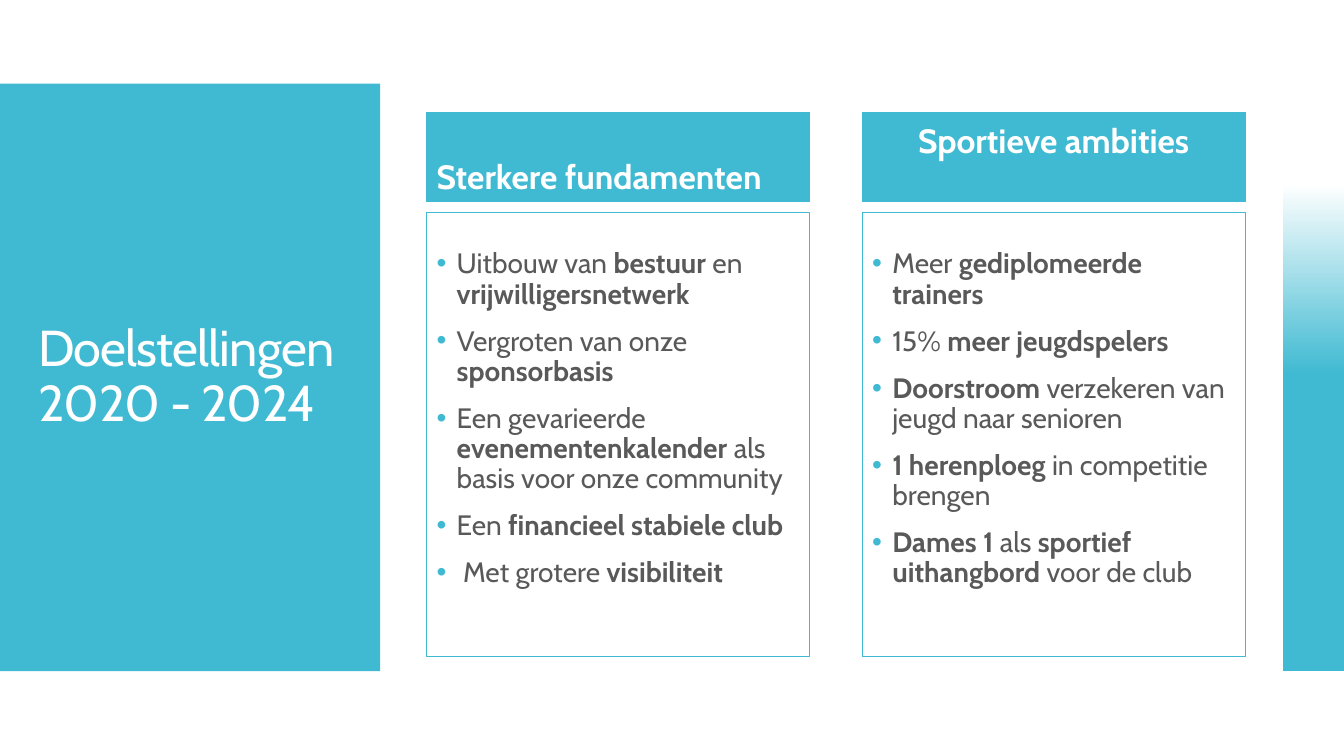
from lxml.etree import SubElement
from pptx import Presentation
from pptx.dml.color import RGBColor
from pptx.enum.shapes import MSO_SHAPE
from pptx.enum.text import MSO_ANCHOR, MSO_AUTO_SIZE, PP_ALIGN
from pptx.oxml.ns import qn
from pptx.util import Inches, Pt

TEAL = RGBColor(0x40, 0xBA, 0xD2)
WHITE = RGBColor(0xFF, 0xFF, 0xFF)
GREY = RGBColor(0x59, 0x59, 0x59)
FONT = "Cabin"

COLUMN_LEFT, COLUMN_STEP = 4.23, 4.32
COLUMN_TOP, COLUMN_WIDTH = 1.12, 3.8
HEADING_HEIGHT, LIST_OFFSET, LIST_HEIGHT = 0.88, 0.99, 4.4

# Asterisks enclose the bold words.
# Each column: heading, alignment, bottom inset of the heading, goals
COLUMNS = [
    ("Sterkere fundamenten", PP_ALIGN.LEFT, 0.05, [
        "Uitbouw van *bestuur *en *vrijwilligersnetwerk*",
        "Vergroten van onze *sponsorbasis*",
        "Een gevarieerde *evenementenkalender *als basis voor onze community",
        "Een *financieel stabiele club*",
        " Met grotere *visibiliteit*",
    ]),
    ("Sportieve ambities", PP_ALIGN.CENTER, 0.41, [
        "Meer *gediplomeerde trainers*",
        "15% *meer jeugdspelers*",
        "*Doorstroom *verzekeren van jeugd naar senioren",
        "*1 herenploeg *in competitie brengen",
        "*Dames 1 *als *sportief uithangbord *voor de club",
    ]),
]


def place(shape, left, top, width, height):
    shape.left, shape.top = Inches(left), Inches(top)
    shape.width, shape.height = Inches(width), Inches(height)


def set_frame(shape, anchor, bottom_inset=0.05):
    frame = shape.text_frame
    frame.word_wrap = True
    frame.auto_size = MSO_AUTO_SIZE.NONE
    frame.vertical_anchor = anchor
    frame.margin_left = frame.margin_right = Inches(0.1)
    frame.margin_top = Inches(0.05)
    frame.margin_bottom = Inches(bottom_inset)
    return frame


def format_font(font, size, color, bold=False):
    font.name = FONT
    font.size = Pt(size)
    font.bold = bold
    font.color.rgb = color


def outline(shape):
    shape.line.color.rgb = TEAL
    shape.line.width = Pt(0.75)


def add_panel(slide, left, top, width, height):
    panel = slide.shapes.add_shape(
        MSO_SHAPE.RECTANGLE, Inches(left), Inches(top), Inches(width), Inches(height))
    panel.shadow.inherit = False
    panel.line.fill.background()
    return panel


def add_fading_strip(slide, left, top, width, height):
    strip = add_panel(slide, left, top, width, height)
    strip.fill.gradient()
    strip.fill.gradient_angle = 270
    stops = zip(strip.fill.gradient_stops, (0.18, 0.5), (WHITE, TEAL))
    for stop, position, color in stops:
        stop.position = position
        stop.color.rgb = color


def fill_title(title, left, top, width, height):
    place(title, left, top, width, height)
    frame = set_frame(title, MSO_ANCHOR.MIDDLE)
    frame.text = "Doelstellingen\v2020 - 2024"
    paragraph = frame.paragraphs[0]
    paragraph.alignment = PP_ALIGN.LEFT
    paragraph.line_spacing = 0.9
    for run in paragraph.runs:
        format_font(run.font, 36, WHITE)
        run.font._element.set("spc", "-60")


def fill_heading(heading, text, alignment, bottom_inset):
    heading.fill.solid()
    heading.fill.fore_color.rgb = TEAL
    outline(heading)
    frame = set_frame(heading, MSO_ANCHOR.BOTTOM, bottom_inset)
    frame.text = text
    paragraph = frame.paragraphs[0]
    paragraph.alignment = alignment
    paragraph.line_spacing = 0.9
    paragraph.space_before = Pt(0)
    format_font(paragraph.runs[0].font, 24, WHITE, bold=True)


def add_bullet(paragraph):
    properties = paragraph._p.get_or_add_pPr()
    properties.set("marL", str(Inches(0.2)))
    properties.set("indent", str(-Inches(0.2)))
    color = SubElement(properties, qn("a:buClr"))
    SubElement(color, qn("a:srgbClr")).set("val", str(TEAL))
    SubElement(properties, qn("a:buFont")).set("typeface", "Arial")
    SubElement(properties, qn("a:buChar")).set("char", "•")


def fill_goals(body, goals):
    outline(body)
    frame = set_frame(body, MSO_ANCHOR.MIDDLE, 0.35)
    for index, goal in enumerate(goals):
        paragraph = frame.add_paragraph() if index else frame.paragraphs[0]
        add_bullet(paragraph)
        paragraph.line_spacing = 0.9
        paragraph.space_before = Pt(12 if index else 0)
        for part_index, part in enumerate(goal.split("*")):
            if part:
                run = paragraph.add_run()
                run.text = part
                format_font(run.font, 20, GREY, bold=part_index % 2 == 1)


def fill_column(heading, body, column, left, top):
    text, alignment, bottom_inset, goals = column
    place(heading, left, top, COLUMN_WIDTH, HEADING_HEIGHT)
    fill_heading(heading, text, alignment, bottom_inset)
    place(body, left, top + LIST_OFFSET, COLUMN_WIDTH, LIST_HEIGHT)
    fill_goals(body, goals)


def build_goals_slide(presentation):
    comparison_layout = presentation.slide_layouts[4]
    slide = presentation.slides.add_slide(comparison_layout)
    title, *column_parts = list(slide.placeholders)

    title_panel = add_panel(slide, 0, 0.83, 3.77, 5.83)
    title_panel.fill.solid()
    title_panel.fill.fore_color.rgb = TEAL
    slide.shapes._spTree.insert(2, title_panel._element)  # behind the title
    fill_title(title, 0.28, 1.23, 3.22, 5.03)

    for index, column in enumerate(COLUMNS):
        heading, body = column_parts[2 * index:2 * index + 2]
        fill_column(heading, body, column, COLUMN_LEFT + index * COLUMN_STEP, COLUMN_TOP)

    add_fading_strip(slide, 12.73, 0.76, 0.6, 5.9)


def main():
    presentation = Presentation()
    presentation.slide_width = Inches(13.33)
    presentation.slide_height = Inches(7.5)
    build_goals_slide(presentation)
    presentation.save("out.pptx")


if __name__ == "__main__":
    main()
